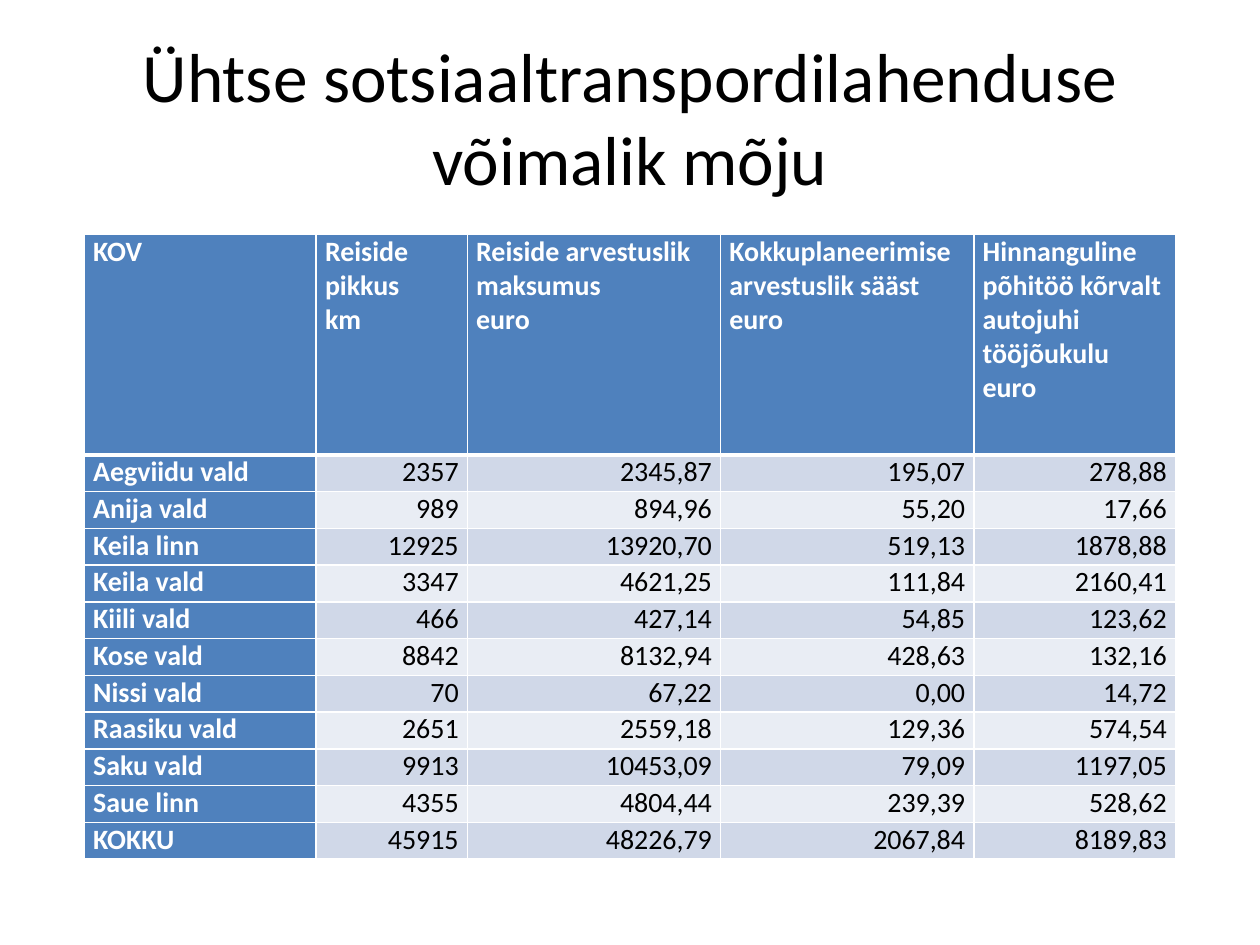
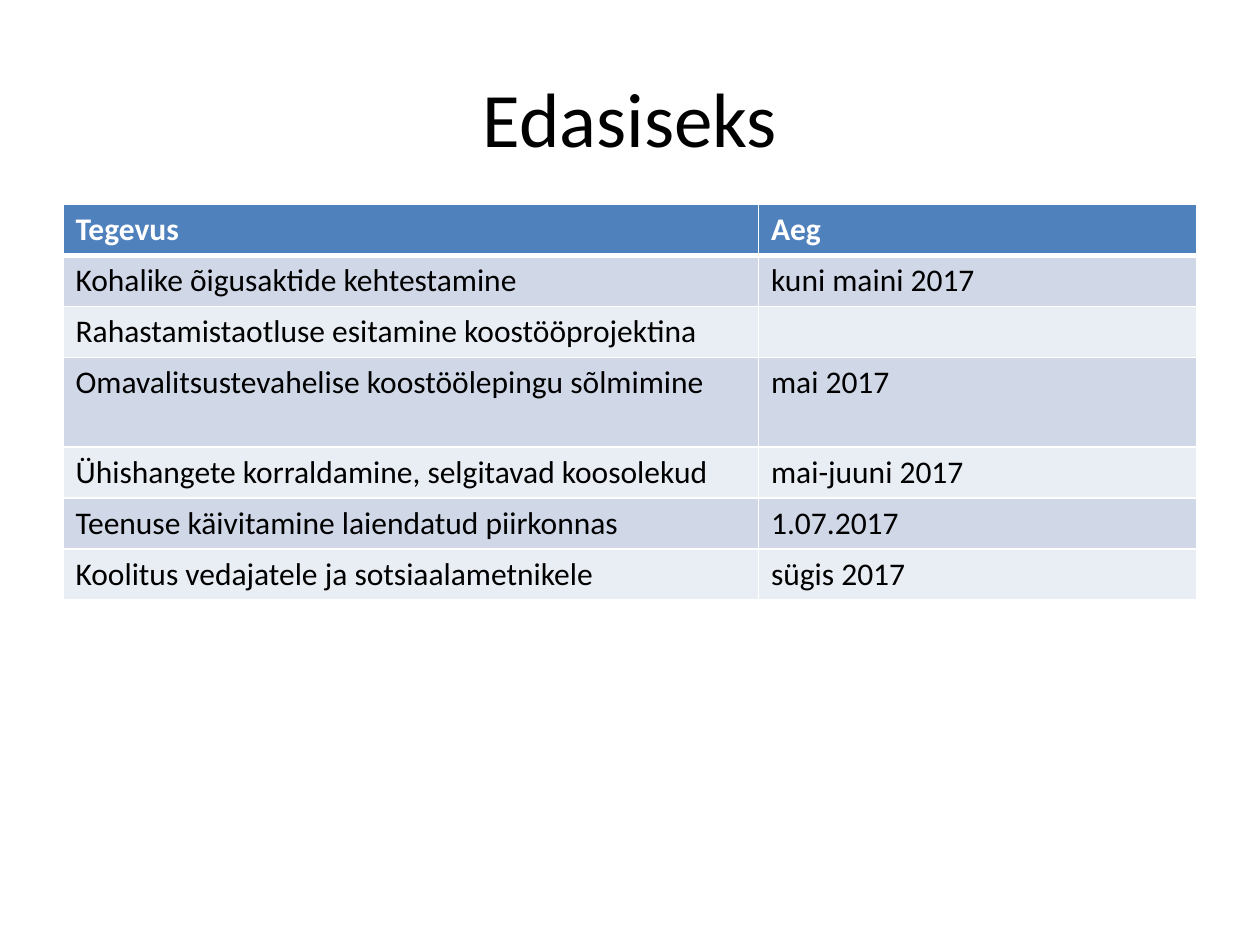
from pptx import Presentation
from pptx.dml.color import RGBColor
from pptx.enum.text import MSO_ANCHOR, MSO_AUTO_SIZE, PP_ALIGN
from pptx.oxml import parse_xml
from pptx.oxml.ns import nsdecls
from pptx.util import Inches, Pt

# Content
IMPACT_TITLE = "Ühtse sotsiaaltranspordilahenduse võimalik mõju"
IMPACT_ROWS = [
    ("KOV", "Reiside pikkus\nkm", "Reiside arvestuslik maksumus\neuro",
     "Kokkuplaneerimise arvestuslik sääst\neuro",
     "Hinnanguline põhitöö kõrvalt autojuhi tööjõukulu euro"),
    ("Aegviidu vald", "2357", "2345,87", "195,07", "278,88"),
    ("Anija vald", "989", "894,96", "55,20", "17,66"),
    ("Keila linn", "12925", "13920,70", "519,13", "1878,88"),
    ("Keila vald", "3347", "4621,25", "111,84", "2160,41"),
    ("Kiili vald", "466", "427,14", "54,85", "123,62"),
    ("Kose vald", "8842", "8132,94", "428,63", "132,16"),
    ("Nissi vald", "70", "67,22", "0,00", "14,72"),
    ("Raasiku vald", "2651", "2559,18", "129,36", "574,54"),
    ("Saku vald", "9913", "10453,09", "79,09", "1197,05"),
    ("Saue linn", "4355", "4804,44", "239,39", "528,62"),
    ("KOKKU", "45915", "48226,79", "2067,84", "8189,83"),
]
NEXT_TITLE = "Edasiseks"
NEXT_STEPS = [
    ("Tegevus", "Aeg"),
    ("Kohalike õigusaktide kehtestamine", "kuni maini 2017"),
    ("Rahastamistaotluse esitamine koostööprojektina", ""),
    ("Omavalitsustevahelise koostöölepingu sõlmimine", "mai 2017"),
    ("Ühishangete korraldamine, selgitavad koosolekud", "mai-juuni 2017"),
    ("Teenuse käivitamine laiendatud piirkonnas", "1.07.2017"),
    ("Koolitus vedajatele ja sotsiaalametnikele", "sügis 2017"),
]

# Shared style
FONT = "Calibri"
BLACK = RGBColor(0x00, 0x00, 0x00)
WHITE = RGBColor(0xFF, 0xFF, 0xFF)
HEADER_BLUE = RGBColor(0x4F, 0x81, 0xBD)
BANDS = (RGBColor(0xE9, 0xED, 0xF4), RGBColor(0xD0, 0xD8, 0xE8))


def write(frame, text, size, color=BLACK, bold=False, align=PP_ALIGN.LEFT):
    frame.text = text
    for paragraph in frame.paragraphs:
        paragraph.alignment = align
        font = paragraph.font
        font.name, font.size, font.bold = FONT, Pt(size), bold
        font.color.rgb = color


def add_borders(cell, bottom, top):
    """Rule the cell in white; the lines go ahead of the fill."""
    widths = {"lnL": 1, "lnR": 1, "lnT": top, "lnB": bottom}
    for position, (side, width) in enumerate(widths.items()):
        line = parse_xml(
            f'<a:{side} {nsdecls("a")} w="{Pt(width)}"><a:solidFill>'
            f'<a:srgbClr val="{WHITE}"/></a:solidFill></a:{side}>')
        cell._tc.get_or_add_tcPr().insert(position, line)


def add_titled_slide(deck, title_text, size):
    slide = deck.slides.add_slide(deck.slide_layouts[5])
    title = slide.shapes.title
    title.left, title.top = Inches(0.5), Inches(0.3)
    title.width, title.height = Inches(9), Inches(1.25)
    frame = title.text_frame
    write(frame, title_text, size, align=PP_ALIGN.CENTER)
    frame.word_wrap = True
    frame.auto_size = MSO_AUTO_SIZE.NONE
    frame.vertical_anchor = MSO_ANCHOR.MIDDLE
    return slide


def add_banded_table(slide, rows, left, top, widths, heights, size,
                     margins=(0.1, 0.05), header_column=False):
    table = slide.shapes.add_table(
        len(rows), len(widths), Inches(left), Inches(top),
        Inches(sum(widths)), Inches(sum(heights))).table
    for column, width in zip(table.columns, widths):
        column.width = Inches(width)
    for r, (entries, height) in enumerate(zip(rows, heights)):
        table.rows[r].height = Inches(height)
        for c, entry in enumerate(entries):
            cell = table.cell(r, c)
            is_header = r == 0 or (header_column and c == 0)
            is_number = header_column and not is_header
            write(cell.text_frame, entry, size, bold=is_header,
                  color=WHITE if is_header else BLACK,
                  align=PP_ALIGN.RIGHT if is_number else PP_ALIGN.LEFT)
            cell.margin_left = cell.margin_right = Inches(margins[0])
            cell.margin_top = cell.margin_bottom = Inches(margins[1])
            cell.fill.solid()
            cell.fill.fore_color.rgb = HEADER_BLUE if is_header else BANDS[r % 2]
            add_borders(cell, bottom=3 if r == 0 else 1, top=3 if r == 1 else 1)


def main():
    deck = Presentation()
    deck.slide_width, deck.slide_height = Inches(10), Inches(7.5)

    # Impact by municipality
    impact = add_titled_slide(deck, IMPACT_TITLE, 39.6)
    header_height, table_height = 1.75, 4.96
    towns = len(IMPACT_ROWS) - 1
    town_height = (table_height - header_height) / towns
    add_banded_table(impact, IMPACT_ROWS, 0.67, 1.86,
                     widths=(1.84, 1.2, 2.01, 2.01, 1.6),
                     heights=[header_height] + [town_height] * towns,
                     size=16, margins=(0.07, 0), header_column=True)

    # Next steps, with a taller row for the cooperation contract
    next_steps = add_titled_slide(deck, NEXT_TITLE, 44)
    step_heights = [0.4] * len(NEXT_STEPS)
    step_heights[3] = 0.71
    add_banded_table(next_steps, NEXT_STEPS, 0.5, 1.62,
                     widths=(5.52, 3.48), heights=step_heights, size=18)

    deck.save("out.pptx")


if __name__ == "__main__":
    main()
